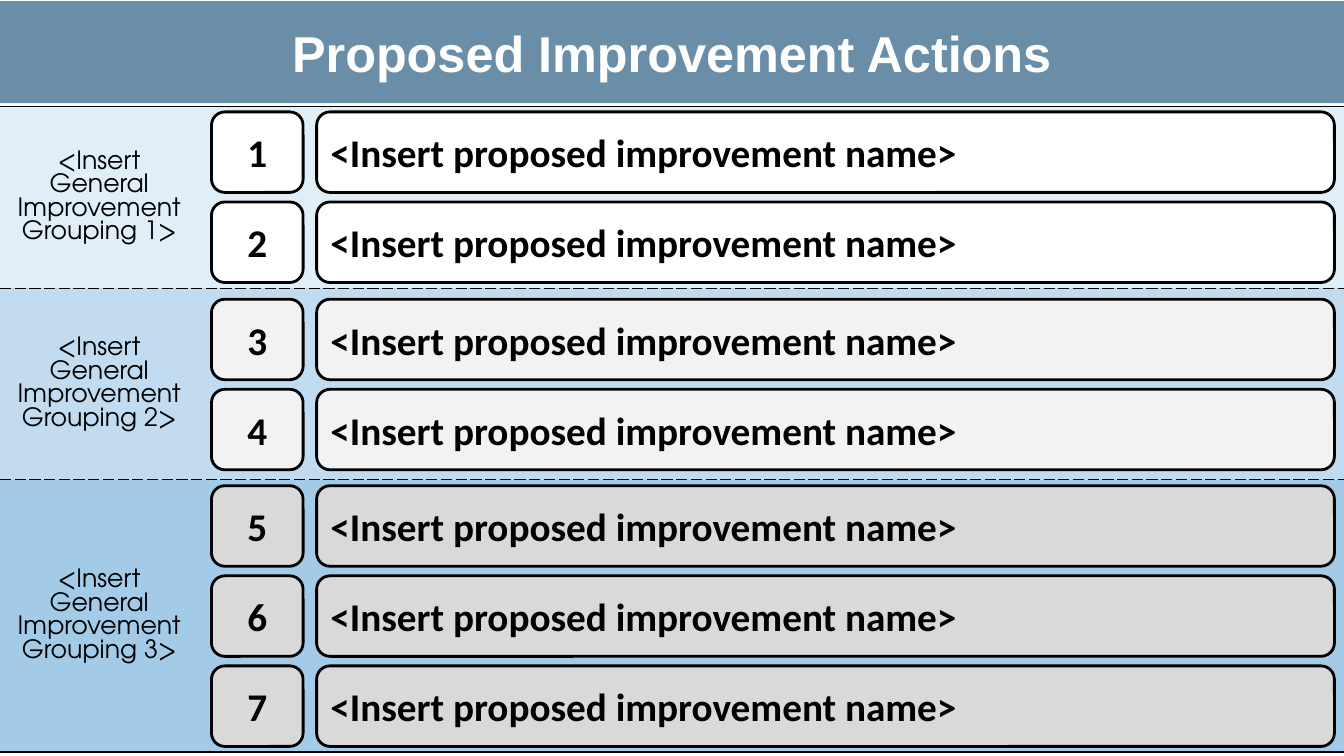
"""Builds the Proposed Improvement Actions slide: three groups of numbered actions."""
from lxml.etree import SubElement
from pptx import Presentation
from pptx.dml.color import RGBColor
from pptx.enum.shapes import MSO_SHAPE as Shape
from pptx.enum.text import MSO_ANCHOR as Anchor, PP_ALIGN as Align
from pptx.oxml import parse_xml
from pptx.oxml.ns import nsdecls, qn
from pptx.util import Cm, Pt


def paint(color_format, value):
    color_format.rgb = RGBColor.from_string(value)


def add_box(kind, left, top, width, height, fill, text, align, font_name, size, color):
    box = slide.shapes.add_shape(kind, Cm(left), Cm(top), Cm(width), Cm(height))
    box.shadow.inherit = False
    box.fill.solid()
    paint(box.fill.fore_color, fill)
    frame = box.text_frame
    frame.text = text
    frame.word_wrap = True
    frame.vertical_anchor = Anchor.MIDDLE
    para = frame.paragraphs[0]
    para.alignment = align
    font = para.runs[0].font
    font.name, font.size, font.bold = font_name, Pt(size), True
    paint(font.color, color)
    return box


ROW_HEIGHTS = [4.57, 4.83, 6.86]
BAND_FILLS = ["E0EEF7", "C1DCF0", "A3CBE8"]
BOX_FILLS = ["FFFFFF", "F2F2F2", "D9D9D9"]
GROUP_TOPS = [2.82, 7.54, 12.24]
GROUP_SIZES = [2, 2, 3]
BOX_STEP = 2.27
ACTION_NAME = "<Insert proposed improvement name>"

deck = Presentation()
deck.slide_width, deck.slide_height = Cm(33.87), Cm(19.05)
slide = deck.slides.add_slide(deck.slide_layouts[6])

table = slide.shapes.add_table(3, 2, 0, Cm(2.69), Cm(33.87), Cm(sum(ROW_HEIGHTS))).table
table.first_row = False
table.horz_banding = False
table.columns[0].width, table.columns[1].width = Cm(5), Cm(28.87)
for index, (height, fill) in enumerate(zip(ROW_HEIGHTS, BAND_FILLS)):
    row = table.rows[index]
    row.height = Cm(height)
    edges = {
        "lnL": None,
        "lnR": None,
        "lnT": "solid" if index == 0 else "sysDash",
        "lnB": "solid" if index == 2 else "sysDash",
    }
    for cell in row.cells:
        cell.fill.solid()
        paint(cell.fill.fore_color, fill)
        properties = cell._tc.get_or_add_tcPr()
        for position, (edge, dash) in enumerate(edges.items()):
            line = parse_xml(f'<a:{edge} {nsdecls("a")} w="12700"/>')
            if dash:
                solid = SubElement(line, qn("a:solidFill"))
                SubElement(solid, qn("a:srgbClr"), val="000000")
                SubElement(line, qn("a:prstDash"), val=dash)
            else:
                SubElement(line, qn("a:noFill"))
            properties.insert(position, line)
    label = row.cells[0]
    label.vertical_anchor = Anchor.MIDDLE
    para = label.text_frame.paragraphs[0]
    para.text = f"<Insert General Improvement Grouping {index + 1}>"
    para.alignment = Align.CENTER
    para.line_spacing = Pt(16.8)
    font = para.runs[0].font
    font.name, font.size = "TeX Gyre Adventor", Pt(18)
    paint(font.color, "000000")

title = add_box(Shape.RECTANGLE, 0, 0.03, 33.87, 2.57, "6B8EA8",
                "Proposed Improvement Actions", Align.CENTER, "Arial", 36, "FFFFFF")
title.line.fill.background()
frame = title.text_frame
frame.margin_left = frame.margin_right = frame.margin_top = frame.margin_bottom = 0

number = 0
for group_top, group_size, fill in zip(GROUP_TOPS, GROUP_SIZES, BOX_FILLS):
    for position in range(group_size):
        number += 1
        top = group_top + position * BOX_STEP
        for left, width, text, align in [
            (7.98, 25.65, ACTION_NAME, Align.LEFT),
            (5.33, 2.31, str(number), Align.CENTER),
        ]:
            box = add_box(Shape.ROUNDED_RECTANGLE, left, top, width, 2.03, fill,
                          text, align, "Calibri", 28, "000000")
            paint(box.line.color, "000000")
            box.line.width = Pt(2)
            box.text_frame.margin_top = box.text_frame.margin_bottom = Cm(0.64)

deck.save("out.pptx")
